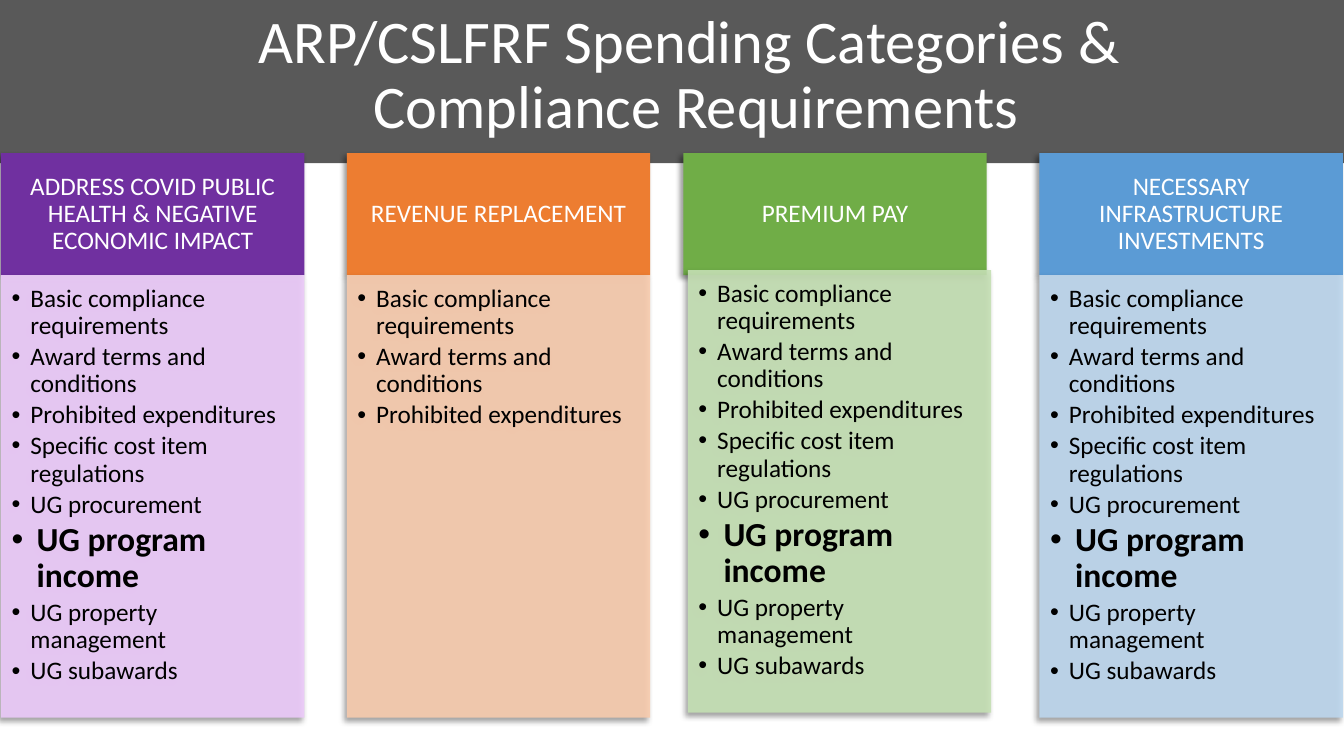
import pptx
import pptx.dml.color
import pptx.enum.shapes
import pptx.enum.text
import pptx.oxml
import pptx.oxml.ns
import pptx.util
import lxml.etree

Pt = pptx.util.Pt
RGBColor = pptx.dml.color.RGBColor
Align = pptx.enum.text.PP_ALIGN
Anchor = pptx.enum.text.MSO_ANCHOR
qn = pptx.oxml.ns.qn

WHITE = RGBColor(0xFF, 0xFF, 0xFF)
BLACK = RGBColor(0x00, 0x00, 0x00)
GRAY = RGBColor(0x59, 0x59, 0x59)
PURPLE = RGBColor(0x70, 0x30, 0xA0)
LILAC = RGBColor(0xEC, 0xCA, 0xFA)
ORANGE = RGBColor(0xED, 0x7D, 0x31)
PEACH = RGBColor(0xF8, 0xCB, 0xAD)
GREEN = RGBColor(0x70, 0xAD, 0x47)
PALE_GREEN = RGBColor(0xC5, 0xE0, 0xB4)
BLUE = RGBColor(0x5B, 0x9B, 0xD5)
PALE_BLUE = RGBColor(0xBD, 0xD7, 0xEE)

TITLE_LINES = ["ARP/CSLFRF Spending Categories & ", "Compliance Requirements"]
EMPHASIZED = "UG program income"
BASIC_RULES = [
    "Basic compliance requirements",
    "Award terms and conditions",
    "Prohibited expenditures",
]
ALL_RULES = BASIC_RULES + [
    "Specific cost item regulations",
    "UG procurement",
    EMPHASIZED,
    "UG property management",
    "UG subawards",
]

COLUMN_WIDTH = 216.7
HEADER_TOP, HEADER_HEIGHT = 109.4, 87.2
PANEL_HEIGHT = 316
# left, heading, header colour, panel colour, rules, panel shift right and down
CATEGORIES = [
    (0.7, "ADDRESS COVID PUBLIC HEALTH & NEGATIVE ECONOMIC IMPACT",
     PURPLE, LILAC, ALL_RULES, (0, 0)),
    (247.7, "REVENUE REPLACEMENT", ORANGE, PEACH, BASIC_RULES, (0, 0)),
    (488.1, "PREMIUM PAY", GREEN, PALE_GREEN, ALL_RULES, (3.2, -3.6)),
    (742.5, "NECESSARY INFRASTRUCTURE INVESTMENTS",
     BLUE, PALE_BLUE, ALL_RULES, (0, 0)),
]


class SlideBuilder:
    """Draws on one slide with a shared text and shadow style."""

    font = "Calibri"
    size = 18
    line_spacing = 0.9

    def __init__(self, page):
        self.page = page

    def rectangle(self, left, top, width, height, color):
        box = self.page.shapes.add_shape(
            pptx.enum.shapes.MSO_SHAPE.RECTANGLE,
            Pt(left), Pt(top), Pt(width), Pt(height))
        box.shadow.inherit = False
        box.fill.solid()
        box.fill.fore_color.rgb = color
        box.line.fill.background()
        return box

    def cast_shadow(self, box):
        effects = box._element.spPr.find(qn("a:effectLst"))
        shadow = lxml.etree.SubElement(
            effects, qn("a:outerShdw"), blurRad=str(Pt(4)), dist=str(Pt(3)),
            dir=str(135 * 60000), algn="tr", rotWithShape="0")
        tint = lxml.etree.SubElement(shadow, qn("a:srgbClr"), val=str(BLACK))
        lxml.etree.SubElement(tint, qn("a:alpha"), val="40000")

    def set_opacity(self, box, percent):
        tint = box._element.spPr.find(qn("a:solidFill"))[0]
        lxml.etree.SubElement(tint, qn("a:alpha"), val=str(percent * 1000))

    def frame(self, box, insets, anchor):
        text = box.text_frame
        text.word_wrap = True
        text.vertical_anchor = anchor
        (text.margin_left, text.margin_top,
         text.margin_right, text.margin_bottom) = map(Pt, insets)
        return text

    def format(self, para, align):
        para.alignment = align
        para.line_spacing = self.line_spacing

    def span(self, para, words, size, color, bold=False):
        run = para.add_run()
        run.text = words
        run.font.name = self.font
        run.font.size = Pt(size)
        run.font.bold = bold
        run.font.color.rgb = color

    def title(self, left, top, width, height, lines):
        box = self.page.shapes.add_textbox(Pt(left), Pt(top), Pt(width), Pt(height))
        para = self.frame(box, (7.2, 3.6, 7.2, 3.6), Anchor.MIDDLE).paragraphs[0]
        self.format(para, Align.CENTER)
        for index, line in enumerate(lines):
            if index:
                para.add_line_break()
            self.span(para, line, 43.2, WHITE)

    def header(self, left, top, width, height, color, heading):
        box = self.rectangle(left, top, width, height, color)
        self.cast_shadow(box)
        para = self.frame(box, (10, 5.8, 10, 5.8), Anchor.MIDDLE).paragraphs[0]
        self.format(para, Align.CENTER)
        self.span(para, heading, self.size, WHITE)

    def panel(self, left, top, width, height, color, rules):
        box = self.rectangle(left, top, width, height, color)
        self.cast_shadow(box)
        self.set_opacity(box, 90)
        text = self.frame(box, (7.5, 7.5, 10, 11.3), Anchor.TOP)
        for index, rule in enumerate(rules):
            para = text.add_paragraph() if index else text.paragraphs[0]
            self.bullet(para, rule, rule == EMPHASIZED)

    def bullet(self, para, words, strong):
        size, indent = (24, 18) if strong else (self.size, 13.5)
        self.format(para, Align.LEFT)
        para.space_after = Pt(0.15 * size)
        properties = para._p.get_or_add_pPr()
        properties.set("marL", str(Pt(indent)))
        properties.set("indent", str(-Pt(indent)))
        lxml.etree.SubElement(properties, qn("a:buFont"), typeface="Arial")
        lxml.etree.SubElement(properties, qn("a:buChar"), char="•")
        self.span(para, words, size, BLACK, strong)


def main():
    deck = pptx.Presentation()
    deck.slide_width, deck.slide_height = Pt(960), Pt(540)
    builder = SlideBuilder(deck.slides.add_slide(deck.slide_layouts[6]))

    builder.rectangle(0, -7.2, 960, 123.8, GRAY)
    builder.title(67.7, 10, 859, 89.3, TITLE_LINES)
    for left, heading, dark, light, rules, (right, down) in CATEGORIES:
        builder.header(left, HEADER_TOP, COLUMN_WIDTH, HEADER_HEIGHT, dark, heading)
        builder.panel(left + right, HEADER_TOP + HEADER_HEIGHT + down,
                      COLUMN_WIDTH, PANEL_HEIGHT, light, rules)
    deck.save("out.pptx")


if __name__ == "__main__":
    main()
